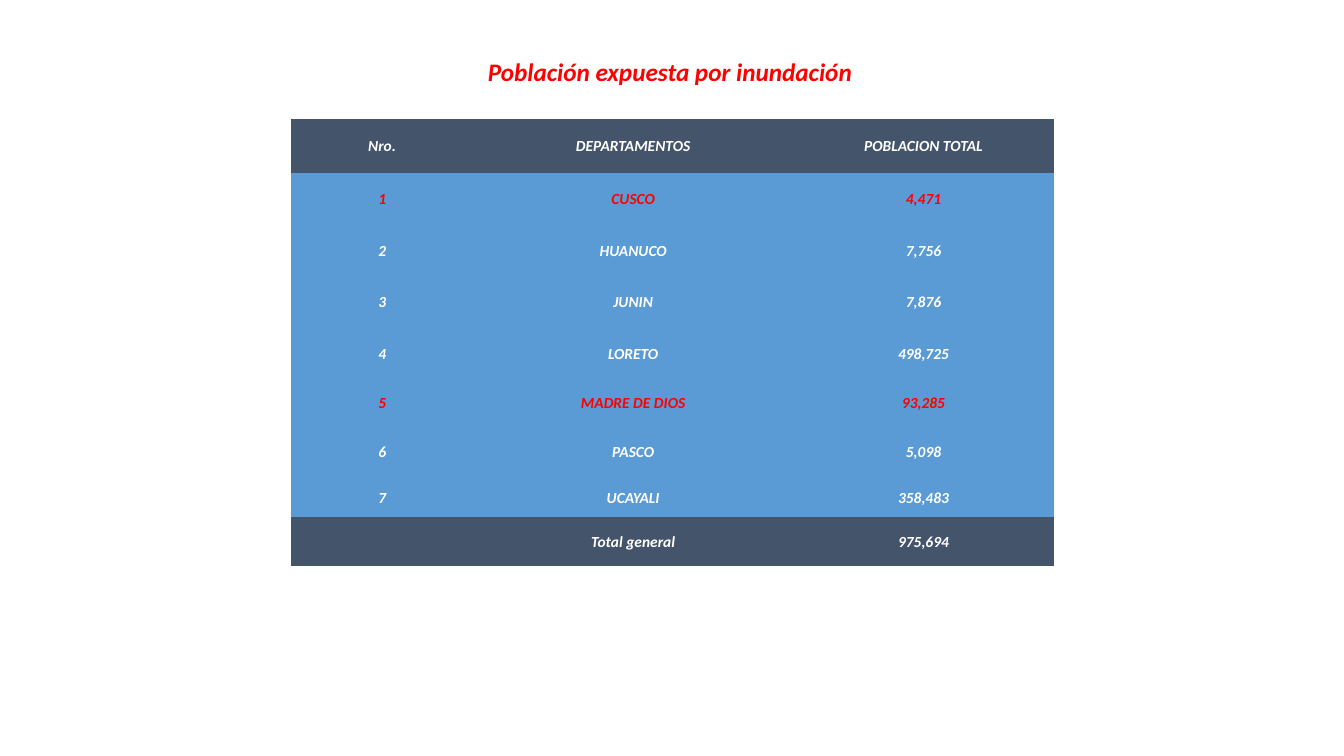
from pptx import Presentation
from pptx.dml.color import RGBColor
from pptx.enum.text import MSO_ANCHOR, PP_ALIGN
from pptx.util import Inches, Pt

CENTER = PP_ALIGN.CENTER
MIDDLE = MSO_ANCHOR.MIDDLE

# Content
TITLE = "Población expuesta por inundación"
HEADER = ("Nro.", "DEPARTAMENTOS", "POBLACION TOTAL")
DEPARTMENTS = [
    ("CUSCO", "4,471"),
    ("HUANUCO", "7,756"),
    ("JUNIN", "7,876"),
    ("LORETO", "498,725"),
    ("MADRE DE DIOS", "93,285"),
    ("PASCO", "5,098"),
    ("UCAYALI", "358,483"),
]
TOTAL = ("", "Total general", "975,694")
HIGHLIGHTED = {"CUSCO", "MADRE DE DIOS"}

# Layout in inches
TITLE_BOX = (4.72, 0.51, 3.85, 0.4)
TABLE_LEFT, TABLE_TOP = 2.89, 1.18
COLUMN_WIDTHS = (1.8, 3.18, 2.58)
ROW_HEIGHTS = (0.54, 0.51, 0.51, 0.51, 0.51, 0.47, 0.51, 0.39, 0.49)
CELL_MARGIN = 0.01


class Theme:
    font = "Calibri"
    title_size = Pt(18)
    cell_size = Pt(11)
    red = RGBColor.from_string("FF0000")
    white = RGBColor.from_string("FFFFFF")
    band = RGBColor.from_string("44546A")
    body = RGBColor.from_string("5B9BD5")
    plain_table_style = "{2D5ABB26-0587-4C30-8999-92F81FD0307C}"


def write(frame, text, size, color):
    frame.text = text
    para = frame.paragraphs[0]
    para.alignment = CENTER
    for span in para.runs:
        font = span.font
        font.name, font.size = Theme.font, size
        font.bold = font.italic = True
        font.color.rgb = color


def fill_cell(cell, text, fill, color):
    cell.fill.solid()
    cell.fill.fore_color.rgb = fill
    cell.vertical_anchor = MIDDLE
    cell.margin_left = cell.margin_right = cell.margin_top = Inches(CELL_MARGIN)
    cell.margin_bottom = 0
    write(cell.text_frame, text, Theme.cell_size, color)


def add_title(page):
    box = page.shapes.add_textbox(*map(Inches, TITLE_BOX))
    box.text_frame.word_wrap = False
    write(box.text_frame, TITLE, Theme.title_size, Theme.red)


def add_population_table(page):
    numbered = [(str(n), *entry) for n, entry in enumerate(DEPARTMENTS, 1)]
    rows = [HEADER, *numbered, TOTAL]
    table = page.shapes.add_table(
        len(rows), len(HEADER), Inches(TABLE_LEFT), Inches(TABLE_TOP),
        Inches(sum(COLUMN_WIDTHS)), Inches(sum(ROW_HEIGHTS))).table

    # Plain style without grid lines
    table.first_row = table.horz_banding = False
    table._tbl.tblPr[0].text = Theme.plain_table_style

    for column, width in zip(table.columns, COLUMN_WIDTHS):
        column.width = Inches(width)
    for r, (values, height) in enumerate(zip(rows, ROW_HEIGHTS)):
        table.rows[r].height = Inches(height)
        fill = Theme.band if values in (HEADER, TOTAL) else Theme.body
        color = Theme.red if values[1] in HIGHLIGHTED else Theme.white
        for c, value in enumerate(values):
            fill_cell(table.cell(r, c), value, fill, color)


def main():
    deck = Presentation()
    deck.slide_width, deck.slide_height = Inches(13.33), Inches(7.5)
    page = deck.slides.add_slide(deck.slide_layouts[6])
    add_title(page)
    add_population_table(page)
    deck.save("out.pptx")


if __name__ == "__main__":
    main()
